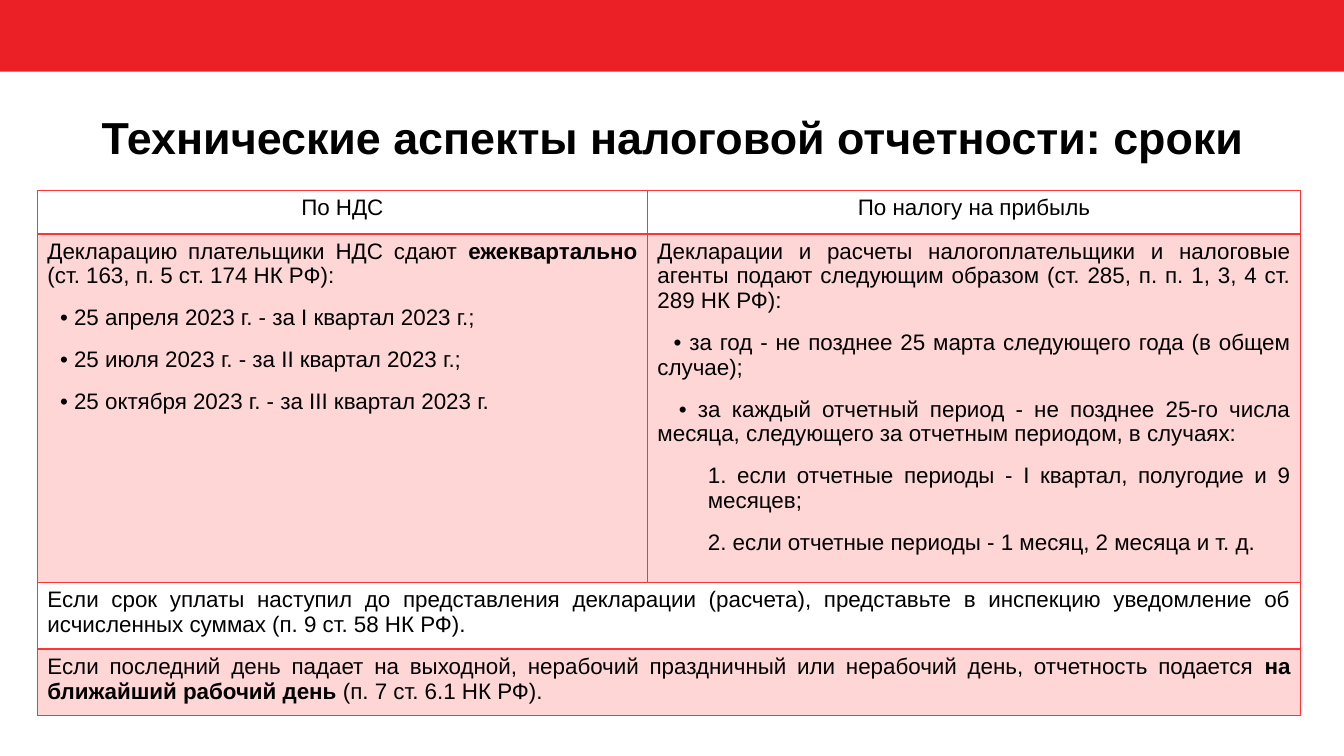
from dataclasses import dataclass

from lxml import etree
from pptx import Presentation, util as u
from pptx.dml.color import RGBColor
from pptx.enum import shapes, text
from pptx.oxml import ns

HUES = {"banner": "EB2027", "rule": "FF3434", "ink": "000000"}
FONT = "Arial"
WIDE, HIGH = u.Inches(13.33), u.Inches(7.5)
LEFT, CENTER, FULL = text.PP_ALIGN.LEFT, text.PP_ALIGN.CENTER, text.PP_ALIGN.JUSTIFY

# Column widths and row heights, in percent of the slide
COLS = (45.39, 48.61)
ROWS = (5.73, 46.13, 8.8, 8.8)


@dataclass
class Para:
    """One paragraph; ** marks bold, shift and first are percent of slide width."""
    words: str
    align: text.PP_ALIGN = FULL
    shift: float = 0
    first: float = 0
    level: int = 0


@dataclass
class Cell:
    row: int
    col: int
    paras: list[Para]
    tint: bool = False
    span: int = 1


CELLS = [
    Cell(0, 0, [Para("По НДС", CENTER)]),
    Cell(0, 1, [Para("По налогу на прибыль", CENTER)]),
    Cell(1, 0, [
        Para("Декларацию плательщики НДС сдают **ежеквартально** (ст. 163, п. 5 ст. 174 НК РФ):"),
        Para("• 25 апреля 2023 г. - за I квартал 2023 г.;", LEFT, first=0.94),
        Para("• 25 июля 2023 г. - за II квартал 2023 г.;", LEFT, first=0.94),
        Para("• 25 октября 2023 г. - за III квартал 2023 г.", LEFT, first=0.94),
    ], tint=True),
    Cell(1, 1, [
        Para("Декларации и расчеты налогоплательщики и налоговые агенты подают "
             "следующим образом (ст. 285, п. п. 1, 3, 4 ст. 289 НК РФ):"),
        Para("• за год - не позднее 25 марта следующего года (в общем случае);", first=1.2),
        Para("• за каждый отчетный период - не позднее 25-го числа месяца, "
             "следующего за отчетным периодом, в случаях:", first=1.6),
        Para("1. если отчетные периоды - I квартал, полугодие и 9 месяцев;", shift=3.75, level=1),
        Para("2. если отчетные периоды - 1 месяц, 2 месяца и т. д.", shift=3.75, level=1),
    ], tint=True),
    Cell(2, 0, [
        Para("Если срок уплаты наступил до представления декларации (расчета), представьте "
             "в инспекцию уведомление об исчисленных суммах (п. 9 ст. 58 НК РФ)."),
    ], span=2),
    Cell(3, 0, [
        Para("Если последний день падает на выходной, нерабочий праздничный или нерабочий день, "
             "отчетность подается **на ближайший рабочий день** (п. 7 ст. 6.1 НК РФ)."),
    ], tint=True, span=2),
]


def across(share: float) -> int:
    return round(WIDE * share / 100)


def down(share: float) -> int:
    return round(HIGH * share / 100)


def hue(name: str) -> RGBColor:
    return RGBColor.from_string(HUES[name])


def write(frame, paras: list[Para], size: float = 16, bold: bool = False,
          gap: float = 0, line: float = 1) -> None:
    for spot, item in enumerate(paras):
        para = frame.add_paragraph() if spot else frame.paragraphs[0]
        para.alignment, para.level, para.line_spacing = item.align, item.level, line
        para.space_before, para.space_after = u.Pt(gap if spot else 0), u.Pt(gap)
        props = para._p.get_or_add_pPr()
        props.set("marL", str(across(item.shift)))
        props.set("indent", str(across(item.first)))
        for part, words in enumerate(item.words.split("**")):
            if not words:
                continue
            run = para.add_run()
            run.text = words
            font = run.font
            font.name, font.size = FONT, u.Pt(size)
            font.bold = bold or part % 2 == 1
            font.color.rgb = hue("ink")


def edge(cell, side: str, width: float) -> None:
    """Draw one border of a cell; call before the fill is set."""
    line = etree.SubElement(cell._tc.get_or_add_tcPr(), ns.qn(f"a:ln{side}"),
                            w=str(u.Pt(width)))
    fill = etree.SubElement(line, ns.qn("a:solidFill"))
    etree.SubElement(fill, ns.qn("a:srgbClr"), val=HUES["rule"])


def shade(cell, tint: bool) -> None:
    if not tint:
        cell.fill.background()
        return
    cell.fill.solid()
    cell.fill.fore_color.rgb = hue("rule")
    color = cell._tc.tcPr.find(".//" + ns.qn("a:solidFill") + "[last()]")
    color = cell._tc.tcPr.find(ns.qn("a:solidFill")).find(ns.qn("a:srgbClr"))
    etree.SubElement(color, ns.qn("a:alpha"), val="20000")


def banner(slide) -> None:
    bar = slide.shapes.add_shape(shapes.MSO_SHAPE.RECTANGLE, 0, 0, WIDE, down(9.47))
    bar.shadow.inherit = False
    bar.fill.solid()
    bar.fill.fore_color.rgb = hue("banner")
    bar.line.fill.background()


def title(slide, words: str) -> None:
    head = slide.shapes.title
    head.left, head.top = across(2.78), down(14.67)
    head.width, head.height = across(94.6), down(14.27)
    frame = head.text_frame
    frame.word_wrap = True
    frame.auto_size = text.MSO_AUTO_SIZE.NONE
    frame.vertical_anchor = text.MSO_ANCHOR.TOP
    write(frame, [Para(words, CENTER)], size=32, bold=True, line=0.9)


def terms(slide) -> None:
    """Add the table of filing deadlines."""
    grid = slide.shapes.add_table(len(ROWS), len(COLS), across(2.78), down(25.2),
                                  across(sum(COLS)), down(sum(ROWS))).table
    grid.first_row = grid.horz_banding = False
    for col, share in zip(grid.columns, COLS):
        col.width = across(share)
    for row, share in zip(grid.rows, ROWS):
        row.height = down(share)
    for item in CELLS:
        cell = grid.cell(item.row, item.col)
        last = item.col + item.span - 1
        if item.span > 1:
            cell.merge(grid.cell(item.row, last))
        for col in range(item.col, last + 1):
            part = grid.cell(item.row, col)
            for side in "LRTB":
                thick = (item.row, side) in ((0, "B"), (1, "T"))
                edge(part, side, 2 if thick else 1)
            shade(part, item.tint)
        write(cell.text_frame, item.paras, gap=6 if item.row == 1 else 0)


def main() -> None:
    deck = Presentation()
    deck.slide_width, deck.slide_height = WIDE, HIGH
    slide = deck.slides.add_slide(deck.slide_layouts[5])
    banner(slide)
    title(slide, "Технические аспекты налоговой отчетности: сроки")
    terms(slide)
    deck.save("out.pptx")


if __name__ == "__main__":
    main()
